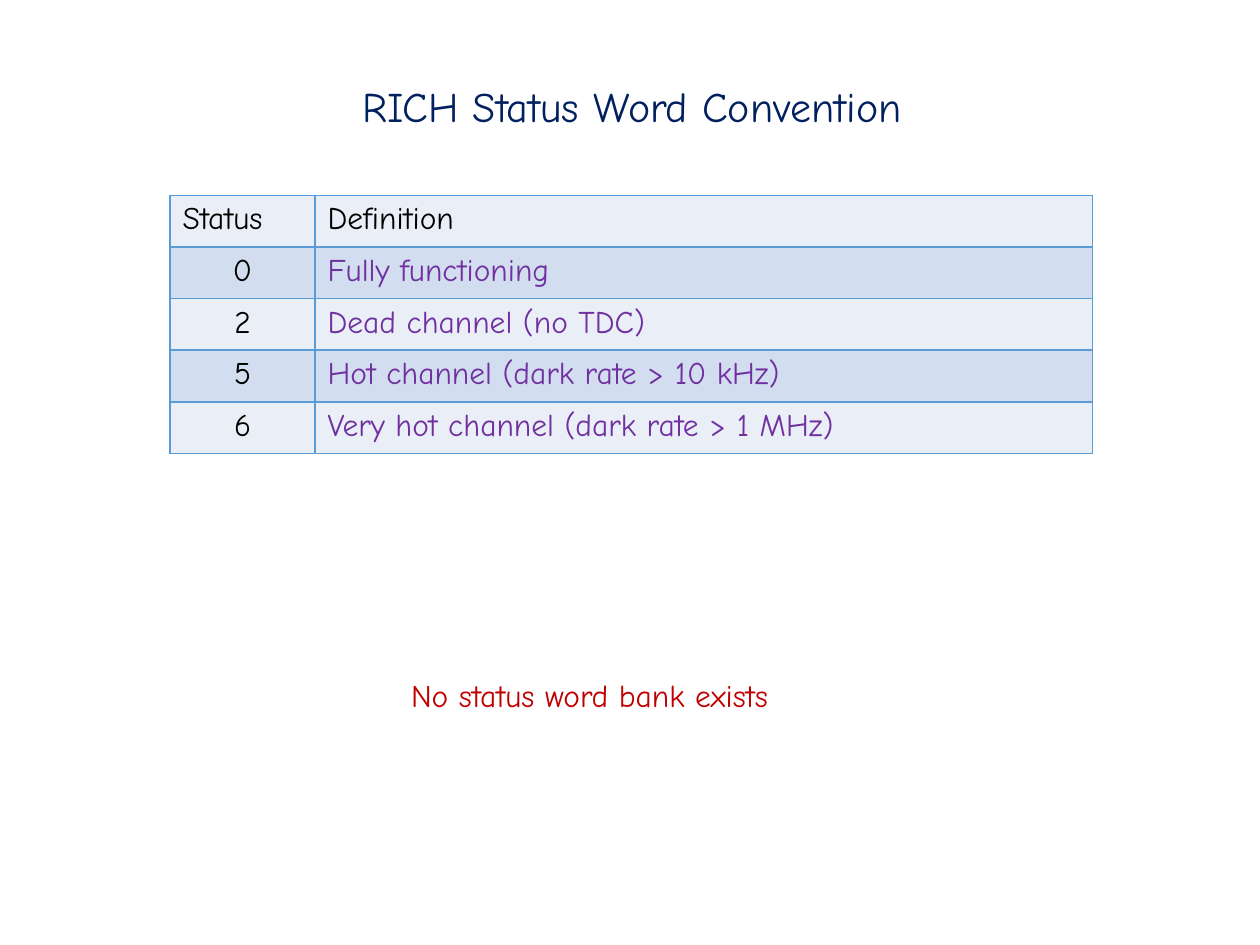
import pptx
import pptx.util
import pptx.dml.color
import pptx.enum.text
import pptx.oxml
import pptx.oxml.ns
from lxml import etree
from pptx.util import Inches

TITLE = "RICH Status Word Convention"
HEADER = ("Status", "Definition")
STATUSES = [
    ("0", "Fully functioning"),
    ("2", "Dead channel (no TDC)"),
    ("5", "Hot channel (dark rate > 10 kHz)"),
    ("6", "Very hot channel (dark rate > 1 MHz)"),
]
NOTE = "No status word bank exists"

THEME = {
    "font": "Comic Neue",
    "title_size": 24,
    "body_size": 18,
    "title": "002060",
    "text": "000000",
    "definition": "7030A0",
    "note": "C00000",
    "bands": ("EAEFF7", "D2DEEF"),
    "border": "5B9BD5",
    "border_width": 1,
}
COLUMN_WIDTHS = (1.15, 6.17)
ROW_HEIGHT = 0.41
ALIGN = pptx.enum.text.PP_ALIGN


def rgb(name):
    return pptx.dml.color.RGBColor.from_string(name)


def write(text_frame, text, size, color, alignment):
    text_frame.text = text
    paragraph = text_frame.paragraphs[0]
    paragraph.alignment = alignment
    font = paragraph.runs[0].font
    font.name = THEME["font"]
    font.size = pptx.util.Pt(size)
    font.bold = False
    font.color.rgb = rgb(color)


def place(shape, left, top, width, height):
    shape.left, shape.top = Inches(left), Inches(top)
    shape.width, shape.height = Inches(width), Inches(height)


def fit_frame(text_frame):
    """Wrap the text and start it at the top of its box."""
    text_frame.word_wrap = True
    text_frame.auto_size = pptx.enum.text.MSO_AUTO_SIZE.SHAPE_TO_FIT_TEXT
    text_frame.vertical_anchor = pptx.enum.text.MSO_ANCHOR.TOP
    text_frame.margin_left = text_frame.margin_right = Inches(0.1)
    text_frame.margin_top = text_frame.margin_bottom = Inches(0.05)


def add_borders(cell):
    """Insert the four edge lines ahead of the cell's fill, as the schema asks."""
    qn = pptx.oxml.ns.qn
    properties = cell._tc.get_or_add_tcPr()
    for position, edge in enumerate(("lnL", "lnR", "lnT", "lnB")):
        line = etree.Element(qn(f"a:{edge}"), w=str(pptx.util.Pt(THEME["border_width"])))
        fill = etree.SubElement(line, qn("a:solidFill"))
        etree.SubElement(fill, qn("a:srgbClr"), val=THEME["border"])
        properties.insert(position, line)


def add_status_table(slide):
    rows = [HEADER] + STATUSES
    table = slide.shapes.add_table(
        len(rows), len(HEADER), Inches(1.35), Inches(1.55),
        Inches(sum(COLUMN_WIDTHS)), Inches(ROW_HEIGHT * len(rows)),
    ).table
    for column, width in zip(table.columns, COLUMN_WIDTHS):
        column.width = Inches(width)
    for row_index, row in enumerate(rows):
        table.rows[row_index].height = Inches(ROW_HEIGHT)
        for column_index, text in enumerate(row):
            cell = table.cell(row_index, column_index)
            is_status = row_index > 0 and column_index == 0
            is_definition = row_index > 0 and column_index == 1
            write(cell.text_frame, text, THEME["body_size"],
                  THEME["definition" if is_definition else "text"],
                  ALIGN.CENTER if is_status else ALIGN.LEFT)
            cell.fill.solid()
            cell.fill.fore_color.rgb = rgb(THEME["bands"][row_index % 2])
            add_borders(cell)


def main():
    presentation = pptx.Presentation()
    presentation.slide_width, presentation.slide_height = Inches(10), Inches(7.5)
    slide = presentation.slides.add_slide(presentation.slide_layouts[5])

    title = slide.shapes.title
    place(title, 1.57, 0.59, 6.89, 0.5)
    fit_frame(title.text_frame)
    write(title.text_frame, TITLE, THEME["title_size"], THEME["title"], ALIGN.CENTER)

    add_status_table(slide)

    note = slide.shapes.add_textbox(0, 0, 0, 0)
    place(note, 2.78, 5.32, 3.8, 0.4)
    fit_frame(note.text_frame)
    write(note.text_frame, NOTE, THEME["body_size"], THEME["note"], ALIGN.CENTER)

    presentation.save("out.pptx")


if __name__ == "__main__":
    main()
